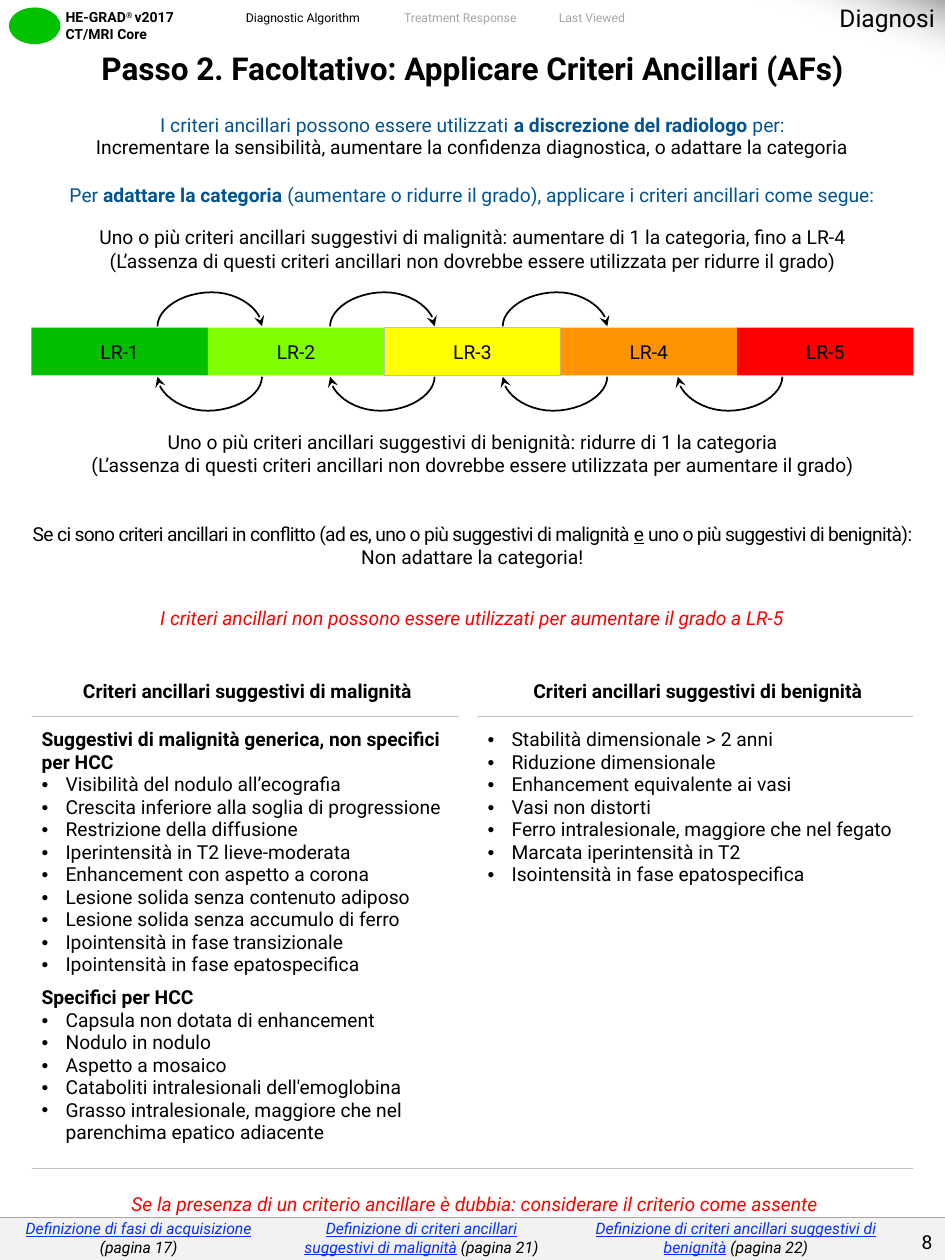
"""Build the ancillary criteria slide with its step table, grade bar and footer."""
import dataclasses
import typing

import lxml.etree
import pptx
import pptx.dml.color
import pptx.enum.shapes
import pptx.enum.text
import pptx.oxml.ns
import pptx.util

Inches = pptx.util.Inches
Pt = pptx.util.Pt
ALIGN = pptx.enum.text.PP_ALIGN
ANCHOR = pptx.enum.text.MSO_ANCHOR
SHAPE = pptx.enum.shapes.MSO_SHAPE
qn = pptx.oxml.ns.qn
BLACK, BLUE, RED, LINK = "000000", "005493", "FF0000", "0432FF"
RULE = "BFBFBF"
PLAIN_STYLE = "{2D5ABB26-0587-4C30-8999-92F81FD0307C}"


@dataclasses.dataclass
class Run:
    text: str
    color: str = BLACK
    bold: bool = False
    ital: bool = False
    under: bool = False
    size: float = 11
    extra: dict = dataclasses.field(default_factory=dict)


@dataclasses.dataclass
class Para:
    runs: list[Run]
    align: typing.Any = ALIGN.CENTER
    bullet: bool = False
    before: float = 0


@dataclasses.dataclass
class Cell:
    row: int
    col: int
    paras: list[Para]
    pad: tuple
    mid: bool = True
    wide: bool = False


@dataclasses.dataclass
class Grade:
    name: str
    fill: str
    line: str = ""


def paint(color: str) -> pptx.dml.color.RGBColor:
    return pptx.dml.color.RGBColor.from_string(color)


def write(frame, paras: list[Para]) -> None:
    for n, para in enumerate(paras):
        p = frame.add_paragraph() if n else frame.paragraphs[0]
        p.alignment = para.align
        if para.before:
            p.space_before = Pt(para.before)
        if para.bullet:
            props = p._p.get_or_add_pPr()
            props.set("marL", str(Inches(0.19)))
            props.set("indent", str(-Inches(0.19)))
            lxml.etree.SubElement(props, qn("a:buFont"), typeface="Arial")
            lxml.etree.SubElement(props, qn("a:buChar")).set("char", "•")
        for item in para.runs:
            run = p.add_run()
            run.text = item.text
            font = run.font
            font.name, font.size = "Roboto", Pt(item.size)
            font.bold, font.italic, font.underline = item.bold, item.ital, item.under
            font.color.rgb = paint(item.color)
            for key, value in item.extra.items():
                run._r.get_or_add_rPr().set(key, value)


def set_pad(frame, pad: tuple) -> None:
    frame.margin_left, frame.margin_top, frame.margin_right, frame.margin_bottom = map(Inches, pad)


def add_label(slide, box: tuple, paras: list[Para], wrap=True, anchor=ANCHOR.MIDDLE, pad=(0.1, 0.05, 0.1, 0.05)) -> None:
    frame = slide.shapes.add_textbox(*map(Inches, box)).text_frame
    frame.word_wrap, frame.vertical_anchor = wrap, anchor
    set_pad(frame, pad)
    write(frame, paras)


def add_grid(slide, spot: tuple, cols: list, rows: list, fill: str):
    size = (sum(cols), sum(rows))
    grid = slide.shapes.add_table(len(rows), len(cols), *map(Inches, spot + size)).table
    grid.first_row = grid.horz_banding = False
    grid._tbl.tblPr.find(qn("a:tableStyleId")).text = PLAIN_STYLE
    for col, width in zip(grid.columns, cols):
        col.width = Inches(width)
    for row, height in zip(grid.rows, rows):
        row.height = Inches(height)
    for cell in grid.iter_cells():
        cell.fill.solid()
        cell.fill.fore_color.rgb = paint(fill)
        set_pad(cell, (0, 0, 0, 0))
    return grid


def fill_cell(grid, item: Cell) -> None:
    cell = grid.cell(item.row, item.col)
    if item.wide:
        cell.merge(grid.cell(item.row, len(grid.columns) - 1))
    set_pad(cell, item.pad)
    cell.vertical_anchor = ANCHOR.MIDDLE if item.mid else ANCHOR.TOP
    write(cell.text_frame, item.paras)


def add_edge(cell, side: str, color: str, width: float) -> None:
    line = lxml.etree.Element(qn("a:ln" + side), w=str(Pt(width)))
    fill = lxml.etree.SubElement(line, qn("a:solidFill"))
    lxml.etree.SubElement(fill, qn("a:srgbClr"), val=color)
    cell._tc.get_or_add_tcPr().insert(0, line)


def curve(a, b, c, d, steps=12) -> list:
    """Return the points of a cubic curve after its start."""
    def mix(t, k):
        s = 1 - t
        return s**3 * a[k] + 3 * s * s * t * b[k] + 3 * s * t * t * c[k] + t**3 * d[k]
    return [(mix(n / steps, 0), mix(n / steps, 1)) for n in range(1, steps + 1)]


def add_arc(slide, left: float, top: float, sign: int) -> None:
    dots = curve((0, 0), (0, 0.14), (0.2, 0.27), (0.43, 0.27))
    dots += curve((0.43, 0.27), (0.66, 0.27), (0.83, 0.12), (0.83, 0))
    pen = slide.shapes.build_freeform(Inches(left), Inches(top))
    pen.add_line_segments([(Inches(left + sign * x), Inches(top - sign * y)) for x, y in dots], close=False)
    arc = pen.convert_to_shape()
    arc.shadow.inherit = False
    arc.fill.background()
    arc.line.color.rgb, arc.line.width = paint(BLACK), Pt(1)
    lxml.etree.SubElement(arc.line._get_or_add_ln(), qn("a:tailEnd"), type="stealth")


def add_block(slide, kind, box: tuple, fill: str, line: str = ""):
    block = slide.shapes.add_shape(kind, *map(Inches, box))
    block.shadow.inherit = False
    block.fill.solid()
    block.fill.fore_color.rgb = paint(fill)
    if line:
        block.line.color.rgb, block.line.width = paint(line), Pt(0.25)
    else:
        block.line.fill.background()
    return block


def bullets(names: list[str]) -> list[Para]:
    return [Para([Run(name)], ALIGN.LEFT, True) for name in names]


def main() -> None:
    deck = pptx.Presentation()
    deck.slide_width, deck.slide_height = Inches(7.5), Inches(10)
    slide = deck.slides.add_slide(deck.slide_layouts[5])

    title = slide.shapes.title
    title.left, title.top, title.width, title.height = map(Inches, (5.42, -0.03, 2.1, 0.34))
    title.text_frame.vertical_anchor = ANCHOR.TOP
    write(title.text_frame, [Para([Run("Diagnosi", size=14)], ALIGN.RIGHT)])
    corner = add_block(slide, SHAPE.RIGHT_TRIANGLE, (5.99, 0, 1.51, 0.55), "FFFFFF")
    corner.rotation = 180
    corner.fill.gradient()
    corner.fill.gradient_angle = 70
    for stop, color, place in zip(corner.fill.gradient_stops, ("A6A6A6", "FFFFFF"), (0, 0.5)):
        stop.color.rgb, stop.position = paint(color), place
    fade = corner._element.spPr.findall(".//" + qn("a:gs"))[1][0]
    lxml.etree.SubElement(fade, qn("a:alpha"), val="0")
    slide.shapes._spTree.insert(2, corner._element)

    add_block(slide, SHAPE.OVAL, (0.07, 0.06, 0.41, 0.29), "00C200")
    brand = [Run("HE-GRAD", bold=True, size=8), Run("® ", bold=True, size=8, extra={"baseline": "30000"}),
             Run("v2017", bold=True, size=8)]
    add_label(slide, (0.45, 0.03, 1.29, 0.34),
              [Para(brand, ALIGN.LEFT), Para([Run("CT/MRI Core", bold=True, size=8)], ALIGN.LEFT)],
              anchor=ANCHOR.TOP, pad=(0.07, 0.04, 0.07, 0.04))
    for left, width, name, color in ((1.84, 1.15, "Diagnostic Algorithm ", BLACK),
                                     (3.09, 1.15, "Treatment Response ", "A6A6A6"),
                                     (4.33, 0.76, "Last Viewed ", "A6A6A6")):
        add_label(slide, (left, 0.03, width, 0.22), [Para([Run(name, color, size=7)])], wrap=False)

    tight = {"spc": "-40"}
    harm = [Para([Run("Suggestivi di malignità generica, non specifici per HCC", bold=True)], ALIGN.LEFT)]
    harm += bullets(["Visibilità del nodulo all’ecografia", "Crescita inferiore alla soglia di progressione",
                     "Restrizione della diffusione", "Iperintensità in T2 lieve-moderata",
                     "Enhancement con aspetto a corona", "Lesione solida senza contenuto adiposo",
                     "Lesione solida senza accumulo di ferro", "Ipointensità in fase transizionale",
                     "Ipointensità in fase epatospecifica"])
    harm += [Para([Run("Specifici per HCC", bold=True)], ALIGN.LEFT, before=6)]
    harm += bullets(["Capsula non dotata di enhancement", "Nodulo in nodulo", "Aspetto a mosaico",
                     "Cataboliti intralesionali dell'emoglobina",
                     "Grasso intralesionale, maggiore che nel parenchima epatico adiacente"])
    mild = bullets(["Stabilità dimensionale > 2 anni", "Riduzione dimensionale", "Enhancement equivalente ai vasi",
                    "Vasi non distorti", "Ferro intralesionale, maggiore che nel fegato",
                    "Marcata iperintensità in T2", "Isointensità in fase epatospecifica"])
    head, body = (0.08, 0.2, 0.04, 0.1), (0.08, 0.1, 0.04, 0.1)
    cells = [
        Cell(0, 0, [Para([Run("Passo 2. Facoltativo: Applicare Criteri Ancillari (AFs)", bold=True, size=18)])],
             (0.1, 0, 0.1, 0.15), wide=True),
        Cell(1, 0, [Para([Run("I criteri ancillari possono essere utilizzati ", BLUE),
                          Run("a discrezione del radiologo", BLUE, True), Run(" per:", BLUE)]),
                    Para([Run("Incrementare la sensibilità, aumentare la confidenza diagnostica, o adattare la categoria")])],
             (0, 0.05, 0, 0.1), wide=True),
        Cell(2, 0, [Para([Run("Per ", BLUE), Run("adattare la categoria ", BLUE, True),
                          Run("(aumentare o ridurre il grado), applicare i criteri ancillari come segue:", BLUE)])],
             (0, 0.1, 0, 2.3), mid=False, wide=True),
        Cell(3, 0, [Para([Run("Se ci sono criteri ancillari in conflitto (ad es, uno o più suggestivi di malignità ", extra=tight),
                          Run("e", under=True, extra=tight), Run(" uno o più suggestivi di benignità):", extra=tight)]),
                    Para([Run("Non adattare la categoria!")])], (0, 0.2, 0, 0.2), wide=True),
        Cell(4, 0, [Para([Run("I criteri ancillari non possono essere utilizzati per aumentare il grado a LR-5", RED, ital=True)])],
             (0, 0.1, 0, 0.2), wide=True),
        Cell(5, 0, [Para([Run("Criteri ancillari suggestivi di malignità", bold=True)])], head),
        Cell(5, 2, [Para([Run("Criteri ancillari suggestivi di benignità", bold=True)])], head),
        Cell(6, 0, harm, body, mid=False),
        Cell(6, 2, mild, body, mid=False),
        Cell(7, 0, [Para([Run("Se la presenza di un criterio ancillare è dubbia: considerare il criterio come assente", RED, ital=True)])],
             head, mid=False, wide=True),
    ]
    steps = add_grid(slide, (0.25, 0.4), [3.39, 0.15, 3.46], [0.44, 0.51, 2.58, 0.76, 0.48, 0.48, 3.59, 0.48], "FFFFFF")
    for item in cells:
        fill_cell(steps, item)
    for row, col, side in ((5, 0, "B"), (5, 2, "B"), (6, 0, "B"), (6, 1, "B"), (6, 2, "B"),
                           (6, 0, "T"), (6, 2, "T"), (7, 0, "T"), (7, 1, "T"), (7, 2, "T")):
        add_edge(steps.cell(row, col), side, RULE, 0.5)

    foot = add_grid(slide, (0, 9.66), [2.2, 2.29, 2.7, 0.31], [0.34], "F2F2F2")
    links = [("Definizione di fasi di acquisizione", "(pagina 17)"),
             ("Definizione di criteri ancillari suggestivi di malignità", " (pagina 21)"),
             ("Definizione di criteri ancillari suggestivi di benignità", " (pagina 22)")]
    for col, (name, page) in enumerate(links):
        runs = [Run(name, LINK, ital=True, under=True, size=9), Run(page, ital=True, size=9)]
        paras = [Para(runs)] if col else [Para([run]) for run in runs]
        fill_cell(foot, Cell(0, col, paras, (0.1, 0.02, 0.1, 0.02)))
    for cell in foot.iter_cells():
        add_edge(cell, "T", "A6A6A6", 0.25)
    add_label(slide, (7.16, 9.71, 0.34, 0.29), [Para([Run("8")], ALIGN.RIGHT)], wrap=False)

    grades = [Grade("LR-1", "02C001"), Grade("LR-2", "80FF00"), Grade("LR-3", "FFFF01", RULE),
              Grade("LR-4", "FF9300"), Grade("LR-5", RED)]
    for n, grade in enumerate(grades):
        block = add_block(slide, SHAPE.RECTANGLE, (0.25 + 1.4 * n, 2.6, 1.4, 0.38), grade.fill, grade.line)
        set_pad(block.text_frame, (0, 0, 0, 0))
        block.text_frame.vertical_anchor = ANCHOR.MIDDLE
        write(block.text_frame, [Para([Run(grade.name)])])
    for left in (1.25, 2.62, 3.99):
        add_arc(slide, left, 2.59, 1)
    for right in (2.08, 3.45, 4.82, 6.21):
        add_arc(slide, right, 2.99, -1)

    for top, first, last in ((1.74, "malignità: aumentare di 1 la categoria, fino a LR-4", "utilizzata per ridurre"),
                             (3.36, "benignità: ridurre di 1 la categoria", "utilizzata per aumentare")):
        add_label(slide, (0.43, top, 6.65, 0.47), [
            Para([Run(f"Uno o più criteri ancillari suggestivi di {first}")]),
            Para([Run(f"(L’assenza di questi criteri ancillari non dovrebbe essere {last} il grado)")])])
    deck.save("out.pptx")


if __name__ == "__main__":
    main()
